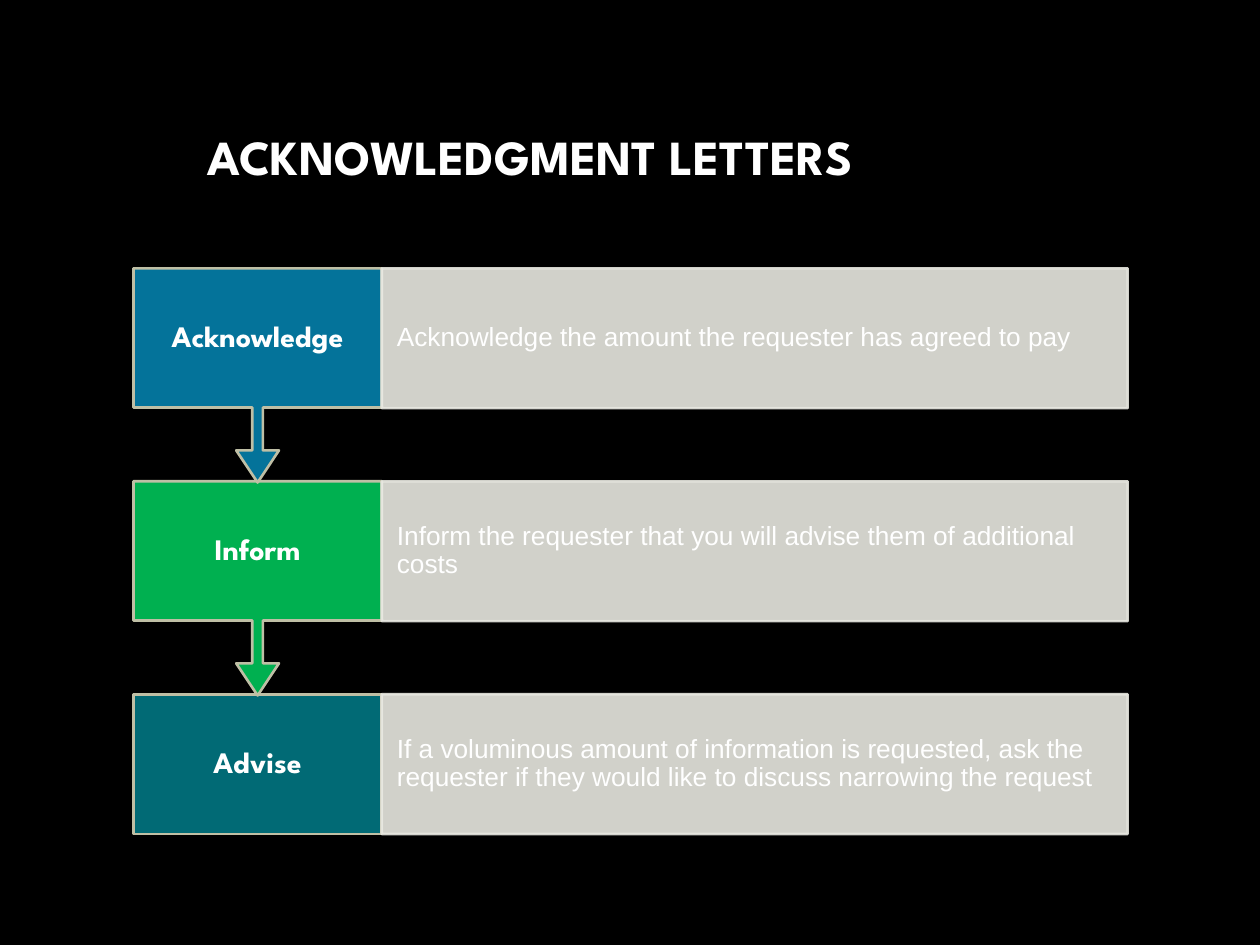
from lxml.etree import SubElement
from pptx import Presentation
from pptx.dml.color import RGBColor
from pptx.enum.shapes import MSO_SHAPE as Kind
from pptx.enum.text import MSO_ANCHOR as Anchor, PP_ALIGN as Align
from pptx.oxml.ns import qn
from pptx.util import Inches, Pt

HUES = {"back": "000000", "white": "FFFFFF", "edge": "BFBFA5", "panel": "E8E8E1",
        "blue": "04739A", "green": "00B050", "teal": "016A75"}
HEAD = "League Spartan"
LEFT, TOP, STEP = 1.06, 2.13, 1.69
TAG_W, BODY_W, ROW_H, CALL_H = 1.97, 5.92, 1.11, 1.7

STEPS = [
    ("Acknowledge", "blue", "Acknowledge the amount the requester has agreed to pay"),
    ("Inform", "green",
     "Inform the requester that you will advise them of additional costs"),
    ("Advise", "teal",
     "If a voluminous amount of information is requested, ask the requester "
     "if they would like to discuss narrowing the request"),
]


def add_box(kind, x, y, w, h, fill, edge, alpha=None):
    """Draw a filled, outlined shape; alpha is its opacity in percent."""
    box = slide.shapes.add_shape(kind, Inches(x), Inches(y), Inches(w), Inches(h))
    box.shadow.inherit = False
    box.line.width = Pt(1.5)
    for paint, hue in ((box.fill, fill), (box.line.fill, edge)):
        paint.solid()
        paint.fore_color.rgb = RGBColor.from_string(HUES[hue])
    if alpha:
        for tint in box._element.spPr.iter(qn("a:srgbClr")):
            SubElement(tint, qn("a:alpha")).set("val", str(alpha * 1000))
    return box


def set_text(box, text, font, size, bold, align, pad_x, pad_y):
    frame = box.text_frame
    frame.word_wrap = True
    frame.vertical_anchor = Anchor.MIDDLE
    frame.margin_left = frame.margin_right = Inches(pad_x)
    frame.margin_top = frame.margin_bottom = Inches(pad_y)
    para = frame.paragraphs[0]
    para.alignment = align
    para.line_spacing = 0.9
    run = para.add_run()
    run.text = text
    run.font.name, run.font.size, run.font.bold = font, Pt(size), bold
    run.font.color.rgb = RGBColor.from_string(HUES["white"])


deck = Presentation()
deck.slide_width, deck.slide_height = Inches(10), Inches(7.5)
slide = deck.slides.add_slide(deck.slide_layouts[6])
slide.background.fill.solid()
slide.background.fill.fore_color.rgb = RGBColor.from_string(HUES["back"])

title = slide.shapes.add_textbox(Inches(LEFT), Inches(0.67), Inches(8.36), Inches(1.2))
set_text(title, "ACKNOWLEDGMENT LETTERS", HEAD, 28, True, Align.LEFT, 0.59, 0.05)

# Drawn from the bottom up, so each arrow tip lies over the row below it
for row, (name, hue, note) in reversed(list(enumerate(STEPS))):
    y = TOP + row * STEP
    if row == len(STEPS) - 1:
        tag = add_box(Kind.RECTANGLE, LEFT, y, TAG_W, ROW_H, hue, "edge")
    else:
        tag = add_box(Kind.DOWN_ARROW_CALLOUT, LEFT, y, TAG_W, CALL_H, hue, "edge")
        for i, part in enumerate((0.05, 0.1, 0.15, 0.65)):
            tag.adjustments[i] = part
    set_text(tag, name, HEAD, 17, True, Align.CENTER, 0.14, 0.13)

    body = add_box(Kind.RECTANGLE, LEFT + TAG_W, y, BODY_W, ROW_H, "panel", "panel", 90)
    set_text(body, note, "Arial", 15, False, Align.LEFT, 0.12, 0.21)

deck.save("out.pptx")
